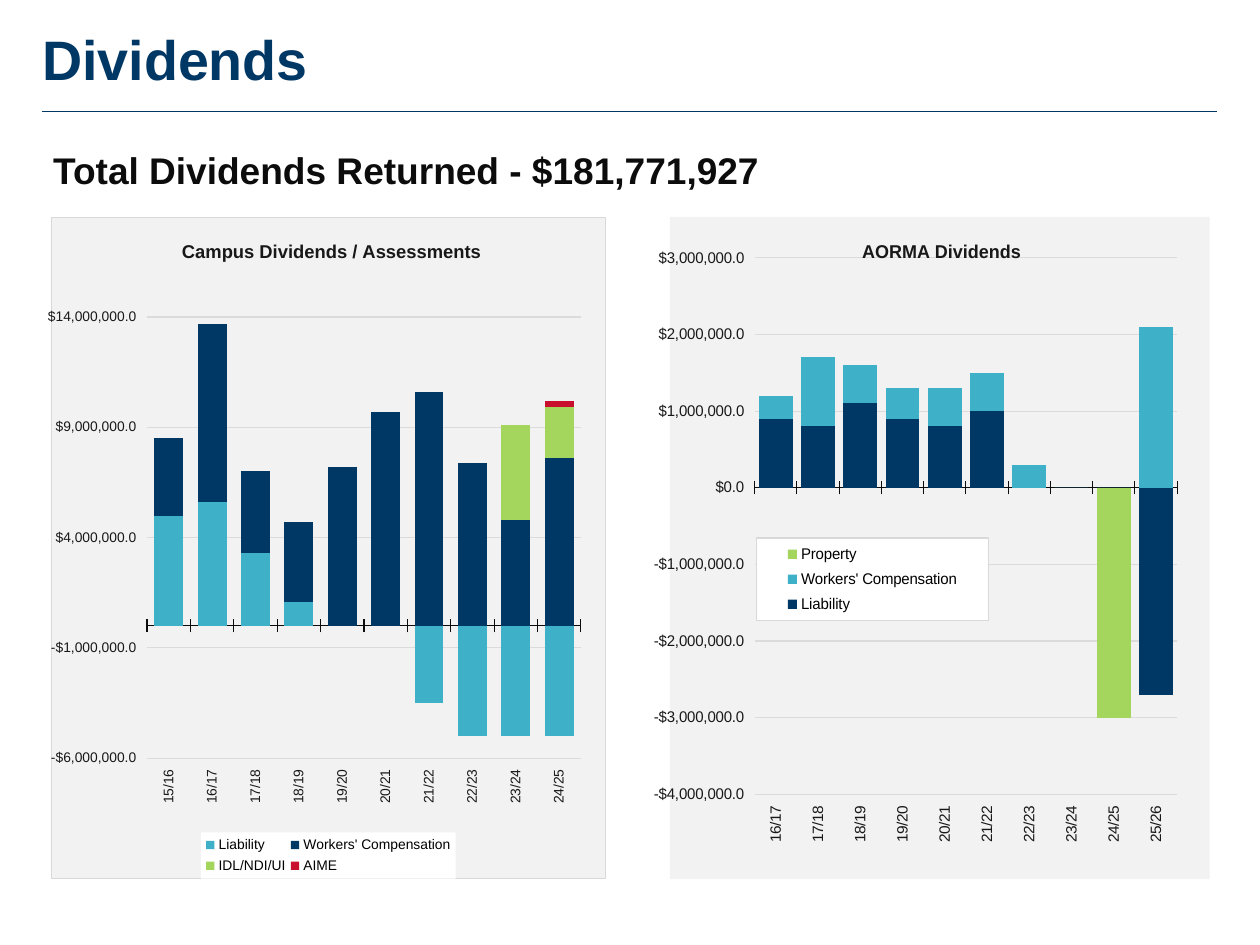
import dataclasses

import lxml.etree
import pptx
import pptx.chart.data
import pptx.dml.color
import pptx.enum.chart
import pptx.enum.shapes
import pptx.enum.text
import pptx.oxml
import pptx.oxml.ns
import pptx.util

Pt = pptx.util.Pt
qn = pptx.oxml.ns.qn


@dataclasses.dataclass(frozen=True)
class Theme:
    font: str = "Arial"
    navy: str = "003865"
    teal: str = "3EB1C8"
    green: str = "A4D65E"
    red: str = "C8102E"
    ink: str = "0C0C0C"
    label: str = "181818"
    black: str = "000000"
    white: str = "FFFFFF"
    panel: str = "F2F2F2"
    border: str = "D9D9D9"
    grid: str = "DBDBDB"
    title_size: float = 36
    subtitle_size: float = 24
    chart_title_size: float = 12
    hairline: float = 0.75


THEME = Theme()


@dataclasses.dataclass(frozen=True)
class DividendChart:
    title: str
    frame: tuple
    first_year: int
    series: tuple
    limits: tuple
    step: int
    gap: int
    size: float
    border: str
    plot_area: tuple
    title_spot: tuple
    legend_side: object
    legend_area: tuple
    legend_border: str


def color(code):
    return pptx.dml.color.RGBColor.from_string(code)


def style(font, size, code, bold=False):
    font.name = THEME.font
    font.size = Pt(size)
    font.bold = bold
    font.color.rgb = color(code)


def add_span(para, text, size, code):
    span = para.add_run()
    span.text = text
    style(span.font, size, code, True)


def add_heading(page, text, frame, size, code, inset, anchor):
    box = page.shapes.add_textbox(*map(Pt, frame)).text_frame
    box.word_wrap = True
    box.vertical_anchor = anchor
    box.margin_left = box.margin_right = Pt(inset)
    box.margin_top = box.margin_bottom = Pt(inset / 2)
    add_span(box.paragraphs[0], text, size, code)


def add_rule(page, left, right, top):
    rule = page.shapes.add_connector(
        pptx.enum.shapes.MSO_CONNECTOR.STRAIGHT, Pt(left), Pt(top), Pt(right), Pt(top))
    rule.line.color.rgb = color(THEME.navy)
    rule.line.width = Pt(THEME.hairline)
    lxml.etree.SubElement(rule.element.spPr, qn("a:effectLst"))


def set_layout(parent, index, area, inner=False):
    for old in parent.findall(qn("c:layout")):
        parent.remove(old)
    layout = parent.makeelement(qn("c:layout"))
    parent.insert(index, layout)
    manual = lxml.etree.SubElement(layout, qn("c:manualLayout"))
    entries = [("layoutTarget", "inner")] if inner else []
    entries += [("xMode", "edge"), ("yMode", "edge")]
    entries += zip("xywh", area)
    for name, value in entries:
        lxml.etree.SubElement(manual, qn(f"c:{name}"), val=str(value))


def paint_after(element, fill, border):
    def paint(code):
        if not code:
            return "<a:noFill/>"
        return f'<a:solidFill><a:srgbClr val="{code}"/></a:solidFill>'

    names = pptx.oxml.ns.nsdecls("c", "a")
    element.addnext(pptx.oxml.parse_xml(
        f'<c:spPr {names}>{paint(fill)}<a:ln w="{Pt(THEME.hairline)}">'
        f"{paint(border)}</a:ln></c:spPr>"))


def style_axes(chart, content):
    years = chart.category_axis
    years.tick_label_position = pptx.enum.chart.XL_TICK_LABEL_POSITION.LOW
    years.major_tick_mark = pptx.enum.chart.XL_TICK_MARK.CROSS
    years.has_major_gridlines = False
    years.format.line.color.rgb = color(THEME.ink)
    years.format.line.width = Pt(THEME.hairline)
    style(years.tick_labels.font, content.size, THEME.label)
    body = chart.element.find(f".//{qn('c:catAx')}/{qn('c:txPr')}/{qn('a:bodyPr')}")
    body.set("rot", "-5400000")
    body.set("vert", "horz")

    amounts = chart.value_axis
    amounts.minimum_scale, amounts.maximum_scale = content.limits
    amounts.major_unit = content.step
    amounts.format.line.fill.background()
    amounts.major_gridlines.format.line.color.rgb = color(THEME.grid)
    amounts.major_gridlines.format.line.width = Pt(THEME.hairline)
    amounts.tick_labels.number_format = '"$"#,##0.0'
    amounts.tick_labels.number_format_is_linked = False
    style(amounts.tick_labels.font, content.size, THEME.label)


def style_legend(chart, content):
    chart.has_legend = True
    chart.legend.position = content.legend_side
    chart.legend.include_in_layout = False
    style(chart.legend.font, content.size, THEME.black)
    legend = chart.element.find(f".//{qn('c:legend')}")
    set_layout(legend, 1, content.legend_area)
    paint_after(legend.find(qn("c:overlay")), THEME.white, content.legend_border)


def add_dividend_chart(page, content):
    data = pptx.chart.data.CategoryChartData()
    data.categories = [f"{year}/{year + 1}"
                       for year in range(content.first_year, content.first_year + 10)]
    for name, code, millions in content.series:
        data.add_series(name, [None if value is None else round(value * 1_000_000)
                               for value in millions])
    chart = page.shapes.add_chart(
        pptx.enum.chart.XL_CHART_TYPE.COLUMN_STACKED,
        *map(Pt, content.frame), data).chart
    style(chart.font, content.size, THEME.ink)

    plot = chart.plots[0]
    plot.gap_width = content.gap
    plot.overlap = 100
    plot.vary_by_categories = False
    for series, (name, code, millions) in zip(plot.series, content.series):
        series.invert_if_negative = False
        series.format.fill.solid()
        series.format.fill.fore_color.rgb = color(code)

    chart.has_title = True
    add_span(chart.chart_title.text_frame.paragraphs[0], content.title,
             THEME.chart_title_size, THEME.label)
    set_layout(chart.element.find(f".//{qn('c:title')}"), 1, content.title_spot)
    set_layout(chart.element.find(f".//{qn('c:plotArea')}"), 0, content.plot_area, True)
    style_axes(chart, content)
    style_legend(chart, content)
    paint_after(chart.element.find(qn("c:chart")), THEME.panel, content.border)


def main():
    deck = pptx.Presentation()
    deck.slide_width, deck.slide_height = Pt(816), Pt(612)
    page = deck.slides.add_slide(deck.slide_layouts[6])
    anchors = pptx.enum.text.MSO_ANCHOR
    sides = pptx.enum.chart.XL_LEGEND_POSITION

    add_rule(page, 27.4, 788.4, 72)
    add_heading(page, "Dividends", (27.4, 21.6, 597, 32.4),
                THEME.title_size, THEME.navy, 0, anchors.MIDDLE)
    add_heading(page, "Total Dividends Returned - $181,771,927", (27.4, 92, 761, 51),
                THEME.subtitle_size, THEME.ink, 7.2, anchors.TOP)
    add_dividend_chart(page, DividendChart(
        "AORMA Dividends", (423.4, 140.4, 360, 429), 16,
        (("Liability", THEME.navy, (0.9, 0.8, 1.1, 0.9, 0.8, 1, 0, 0, 0, -2.7)),
         ("Workers' Compensation", THEME.teal,
          (0.3, 0.9, 0.5, 0.4, 0.5, 0.5, 0.3, 0, 0, 2.1)),
         ("Property", THEME.green, (None,) * 8 + (-3, None))),
        (-4_000_000, 3_000_000), 1_000_000, 25, 10, None,
        (0.157, 0.062, 0.783, 0.81), (0.35, 0.03),
        sides.RIGHT, (0.16, 0.485, 0.43, 0.125), THEME.border))
    add_dividend_chart(page, DividendChart(
        "Campus Dividends / Assessments", (31, 140.4, 361.4, 429), 15,
        (("Liability", THEME.teal, (5, 5.6, 3.3, 1.1, 0, 0, -3.5, -5, -5, -5)),
         ("Workers' Compensation", THEME.navy,
          (3.5, 8.1, 3.7, 3.6, 7.2, 9.7, 10.6, 7.4, 4.8, 7.6)),
         ("IDL/NDI/UI", THEME.green, (0,) * 8 + (4.3, 2.3)),
         ("AIME", THEME.red, (0,) * 9 + (0.3,))),
        (-6_000_000, 16_000_000), 5_000_000, 50, 9, THEME.border,
        (0.173, 0.084, 0.783, 0.734), (0.23, 0.03),
        sides.BOTTOM, (0.27, 0.93, 0.46, 0.07), None))
    deck.save("out.pptx")


if __name__ == "__main__":
    main()
